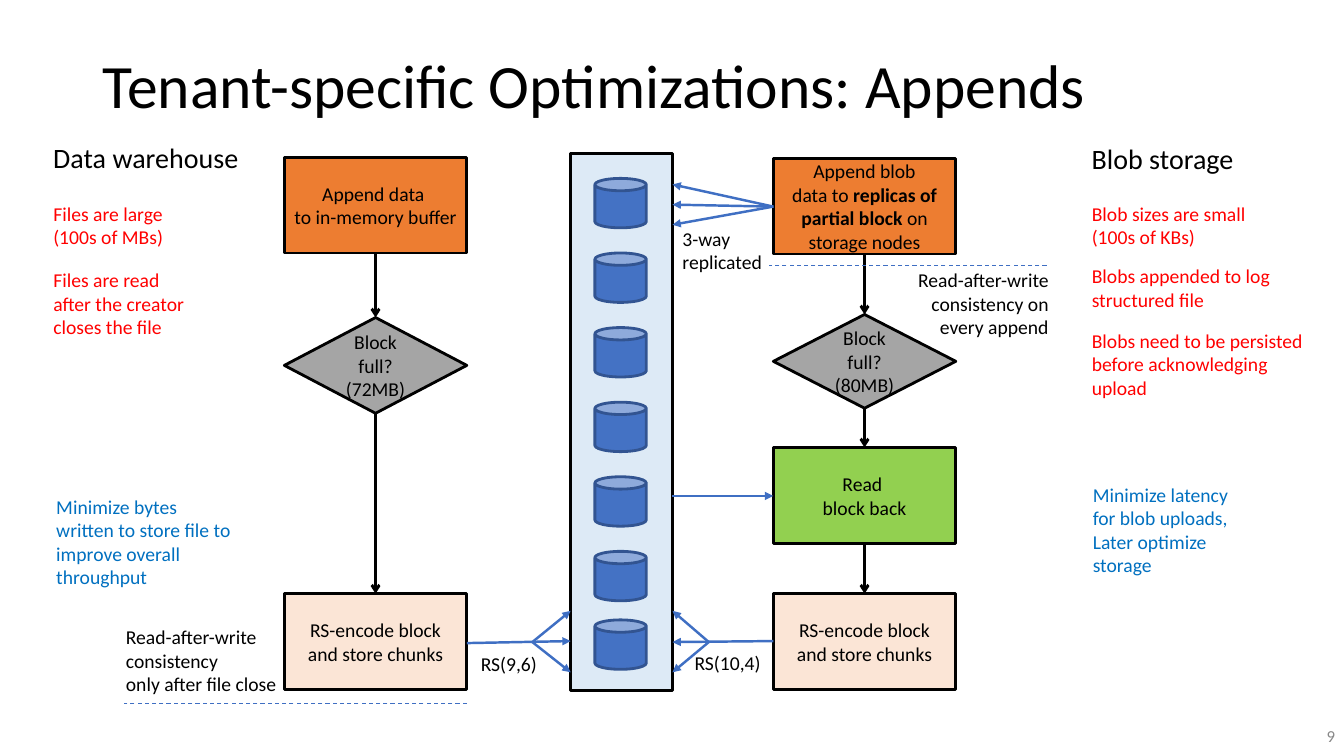
from lxml.etree import SubElement
from pptx import Presentation
from pptx.dml.color import RGBColor
from pptx.enum.dml import MSO_LINE
from pptx.enum.shapes import MSO_CONNECTOR, MSO_SHAPE
from pptx.enum.text import MSO_ANCHOR, MSO_AUTO_SIZE, PP_ALIGN
from pptx.oxml.ns import qn
from pptx.util import Inches, Pt

BLACK = RGBColor(0x00, 0x00, 0x00)
ORANGE = RGBColor(0xED, 0x7D, 0x31)
GREEN = RGBColor(0x92, 0xD0, 0x50)
PEACH = RGBColor(0xFB, 0xE5, 0xD6)
GRAY = RGBColor(0xA5, 0xA5, 0xA5)
NUMBER_GRAY = RGBColor(0x88, 0x88, 0x88)
PALE_BLUE = RGBColor(0xDD, 0xEA, 0xF6)
DISK_BLUE = RGBColor(0x44, 0x72, 0xC4)
DISK_EDGE = RGBColor(0x32, 0x54, 0x91)
ARROW_BLUE = RGBColor(0x3F, 0x6F, 0xC3)
RED = RGBColor(0xFF, 0x00, 0x00)
GOAL_BLUE = RGBColor(0x00, 0x70, 0xC0)

presentation = Presentation()
presentation.slide_width = Inches(13.33)
presentation.slide_height = Inches(7.5)
slide = presentation.slides.add_slide(presentation.slide_layouts[6])

# Grid: two flow columns around the storage column, notes at both sides
WAREHOUSE, STORAGE, BLOB = 2.82, 5.66, 7.67
LEFT_NOTES, RIGHT_NOTES = 0.43, 10.73
BOX_WIDTH, BOX_HEIGHT = 1.81, 0.95
STORAGE_WIDTH = 1.01
WAREHOUSE_EDGE = WAREHOUSE + BOX_WIDTH
STORAGE_EDGE = STORAGE + STORAGE_WIDTH
ENCODE_TOP = 5.89


def add_block(kind, left, top, width, height, fill, line=BLACK, text=""):
    shape = slide.shapes.add_shape(
        kind, Inches(left), Inches(top), Inches(width), Inches(height))
    shape.shadow.inherit = False
    shape.fill.solid()
    shape.fill.fore_color.rgb = fill
    shape.line.color.rgb = line
    shape.line.width = Pt(2)
    shape.text_frame.text = text
    shape.text_frame.vertical_anchor = MSO_ANCHOR.MIDDLE
    for paragraph in shape.text_frame.paragraphs:
        paragraph.alignment = PP_ALIGN.CENTER
        for run in paragraph.runs:
            run.font.name = "Calibri"
            run.font.size = Pt(14)
            run.font.color.rgb = BLACK
    return shape


def add_line(start, end, color, width, head=None):
    connector = slide.shapes.add_connector(
        MSO_CONNECTOR.STRAIGHT, *(Inches(value) for value in start + end))
    connector.line.color.rgb = color
    connector.line.width = Pt(width)
    if head:
        SubElement(connector.line._get_or_add_ln(), qn("a:tailEnd"), type=head)
    SubElement(connector._element.spPr, qn("a:effectLst"))
    return connector


# Storage column with its disks
add_block(MSO_SHAPE.RECTANGLE, STORAGE, 1.52, STORAGE_WIDTH, 5.33, PALE_BLUE)
disk_tops = [1.77 + 0.74 * row for row in range(6)] + [6.15]
for top in disk_tops:
    add_block(MSO_SHAPE.CAN, 5.9, top, 0.51, 0.49, DISK_BLUE, DISK_EDGE)

# Flow steps of both tenants, each joined to the next one
RECTANGLE, DIAMOND = MSO_SHAPE.RECTANGLE, MSO_SHAPE.DIAMOND
encode_step = (RECTANGLE, ENCODE_TOP, BOX_HEIGHT, PEACH,
               "RS-encode block and store chunks")
flows = {
    WAREHOUSE: [
        (RECTANGLE, 1.56, BOX_HEIGHT, ORANGE,
         "Append data \vto in-memory buffer"),
        (DIAMOND, 3.15, BOX_HEIGHT, GRAY, "Block full? (72MB)"),
        encode_step,
    ],
    BLOB: [
        (RECTANGLE, 1.57, BOX_HEIGHT, ORANGE, "Append blob\vdata to "),
        (DIAMOND, 3.12, 0.93, GRAY, "Block full? (80MB)"),
        (RECTANGLE, 4.44, BOX_HEIGHT, GREEN, "Read \nblock back"),
        encode_step,
    ],
}
for left, steps in flows.items():
    previous = None
    for kind, top, height, fill, text in steps:
        step = add_block(kind, left, top, BOX_WIDTH, height, fill, text=text)
        if text.startswith("Append blob"):
            for words, bold in (("replicas of partial block", True),
                                (" on storage nodes", False)):
                run = step.text_frame.paragraphs[0].add_run()
                run.text = words
                run.font.name = "Calibri"
                run.font.size = Pt(14)
                run.font.bold = bold
                run.font.color.rgb = BLACK
        if previous:
            arrow = add_line((0, 0), (0, 0), BLACK, 2, "arrow")
            arrow.begin_connect(previous, 2)
            arrow.end_connect(step, 0)
        previous = step

# Data arrows between the steps and the storage column
data_arrows = [((BLOB, 2.05), (STORAGE_EDGE, y)) for y in (1.83, 2.03, 2.23)]
data_arrows += [
    ((STORAGE_EDGE, 4.92), (BLOB, 4.92)),
    ((WAREHOUSE_EDGE, 6.38), (STORAGE, 6.36)),
    ((BLOB, 6.36), (STORAGE_EDGE, 6.37)),
]
for y in (6.06, 6.67):
    data_arrows += [((5.28, 6.37), (STORAGE, y)),
                    ((7.03, 6.37), (STORAGE_EDGE, y))]
for start, end in data_arrows:
    add_line(start, end, ARROW_BLUE, 1.75, "triangle")

# Dashed consistency marks
for left, right, y in ((1.23, WAREHOUSE_EDGE, 6.98), (7.63, 10.38, 2.63)):
    mark = add_line((right, y), (left, y), ARROW_BLUE, 0.75)
    mark.line.dash_style = MSO_LINE.DASH

# Texts: left, top, width, height, size, color, wrap, alignment, words
LEFT, RIGHT = PP_ALIGN.LEFT, PP_ALIGN.RIGHT
texts = [
    (0.92, 0.15, 11.5, 1.45, 44, BLACK, True, LEFT,
     "Tenant-specific Optimizations: Appends"),
    (LEFT_NOTES, 1.34, 2.07, 0.44, 20, BLACK, False, LEFT, "Data warehouse"),
    (RIGHT_NOTES, 1.35, 1.63, 0.44, 20, BLACK, False, LEFT, "Blob storage"),
    (LEFT_NOTES, 1.95, 1.99, 0.81, 14, RED, True, LEFT,
     "Files are large\n(100s of MBs)"),
    (LEFT_NOTES, 2.61, 1.71, 0.81, 14, RED, True, LEFT,
     "Files are read\nafter the creator\ncloses the file"),
    (RIGHT_NOTES, 1.95, 1.75, 0.57, 14, RED, False, LEFT,
     "Blob sizes are small\n(100s of KBs)"),
    (RIGHT_NOTES, 2.57, 2.42, 0.57, 14, RED, True, LEFT,
     "Blobs appended to log\nstructured file"),
    (RIGHT_NOTES, 3.21, 2.49, 0.81, 14, RED, True, LEFT,
     "Blobs need to be persisted\nbefore acknowledging\nupload"),
    (0.46, 4.86, 1.93, 1.04, 14, GOAL_BLUE, True, LEFT,
     "Minimize bytes written to store file to improve overall\nthroughput"),
    (10.74, 4.74, 1.94, 1.28, 14, GOAL_BLUE, True, LEFT,
     "Minimize latency\nfor blob uploads, Later optimize storage"),
    (1.15, 6.15, 1.81, 0.81, 14, BLACK, True, LEFT,
     "Read-after-write\nconsistency\nonly after file close"),
    (8.95, 2.61, 1.55, 0.81, 14, BLACK, True, RIGHT,
     "Read-after-write consistency on every append"),
    (STORAGE_EDGE, 2.2, 1.01, 0.57, 14, BLACK, False, LEFT,
     "3-way\nreplicated"),
    (4.67, 6.42, 1.31, 0.34, 14, BLACK, True, LEFT, "RS(9,6)"),
    (6.79, 6.41, 1.31, 0.34, 14, BLACK, True, LEFT, "RS(10,4)"),
    (10.34, 7.1, 3, 0.4, 12, NUMBER_GRAY, True, RIGHT, "9"),
]
for left, top, width, height, size, color, wrap, alignment, words in texts:
    box = slide.shapes.add_textbox(
        Inches(left), Inches(top), Inches(width), Inches(height))
    frame = box.text_frame
    frame.text = words
    frame.word_wrap = wrap
    if size in (14, 20):
        frame.auto_size = MSO_AUTO_SIZE.SHAPE_TO_FIT_TEXT
    else:
        frame.vertical_anchor = MSO_ANCHOR.MIDDLE
    for paragraph in frame.paragraphs:
        paragraph.alignment = alignment
        if size == 44:
            paragraph.line_spacing = 0.9
        for run in paragraph.runs:
            run.font.name = "Calibri"
            run.font.size = Pt(size)
            run.font.color.rgb = color

presentation.save("out.pptx")
